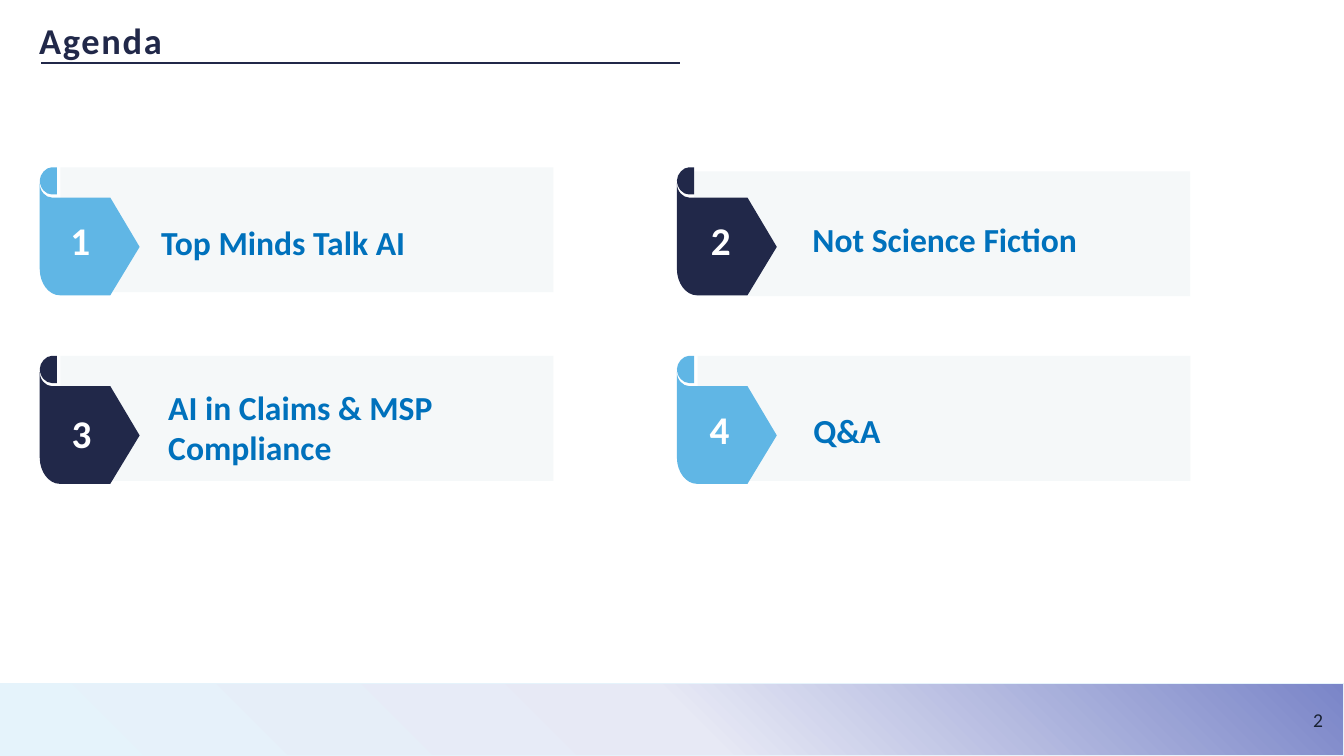
from dataclasses import dataclass

from lxml import etree
from pptx import Presentation
from pptx import util as u
from pptx.dml.color import RGBColor
from pptx.enum import shapes, text
from pptx.oxml import ns

NAVY = RGBColor(0x21, 0x28, 0x49)
SKY = RGBColor(0x60, 0xB6, 0xE5)
BLUE = RGBColor(0x00, 0x71, 0xBC)
MIST = RGBColor(0xF5, 0xF8, 0xF9)
WHITE = RGBColor(0xFF, 0xFF, 0xFF)
INK = RGBColor(0x19, 0x22, 0x33)
ICE = RGBColor(0xE5, 0xF3, 0xFB)
HAZE = RGBColor(0xE7, 0xE9, 0xF5)
IRIS = RGBColor(0x7A, 0x85, 0xC8)

FONT = "Calibri"
WIDE, HIGH = u.Inches(13.33), u.Inches(7.5)

Point = tuple[float, float]
Box = tuple[float, float, float, float]


@dataclass(frozen=True)
class Card:
    """Agenda item; the boxes and offsets are relative to its grid cell."""
    num: str
    label: str
    col: int
    row: int
    color: RGBColor
    num_at: Point
    text_box: Box
    panel: Box = (1.53, 0, 36.68, 16.53)


# All lengths are percentages of the slide's width and height.
COLS, ROWS = (2.96, 50.37), (22.13, 47.07)
NUM_SIZE = (4.88, 7.6)
CARDS = (
    Card("1", "Top Minds Talk AI", 0, 0, SKY, (0.57, 5.8), (8.29, 6.53, 29.5, 6.67)),
    Card("2", "Not Science Fiction", 1, 0, NAVY, (0.83, 5.8), (9.34, 6.13, 28.8, 6.67),
         (1.28, 0.53, 36.9, 16.53)),
    Card("3", "AI in Claims & MSP Compliance", 0, 1, NAVY, (0.67, 6.45),
         (8.82, 3.47, 29, 12.13)),
    Card("4", "Q&A", 1, 1, SKY, (0.73, 5.87), (9.41, 6.53, 28.7, 6.67)),
)

# One point is a straight step, three points are a Bézier step.
ARROW = (
    ((0, 13.47),),
    ((0, 15.33), (0.67, 16.93), (1.5, 16.93)),
    ((5.25, 16.93),), ((7.43, 10.53),), ((5.25, 4),), ((0.9, 4),),
    ((0.45, 4), (0, 3.2), (0, 2.13)),
)
CURL = (
    ((0, 1.73),),
    ((0, 2.8), (0.45, 3.6), (0.9, 3.6)),
    ((1.28, 3.6),), ((1.28, 0),), ((0.9, 0),),
    ((0.45, 0), (0, 0.93), (0, 1.73)),
)


def across(share: float) -> int:
    return round(WIDE * share / 100)


def down(share: float) -> int:
    return round(HIGH * share / 100)


def place(box: Box) -> tuple[int, int, int, int]:
    left, top, width, height = box
    return across(left), down(top), across(width), down(height)


def shift(box: Box, left: float, top: float) -> Box:
    return box[0] + left, box[1] + top, box[2], box[3]


def curve(shape, steps: tuple) -> None:
    """Join the three line segments of each Bézier step into one curve."""
    trail = shape._element.spPr.find(".//" + ns.qn("a:path"))
    nodes = iter(list(trail))
    for step in steps:
        parts = [next(nodes) for _ in step]
        if len(parts) == 3:
            bend = etree.Element(ns.qn("a:cubicBezTo"))
            parts[0].addprevious(bend)
            for part in parts:
                bend.append(part[0])
                trail.remove(part)


def add_form(slide, steps: tuple, left: float, top: float, color: RGBColor) -> None:
    spots = [(across(left + x), down(top + y)) for step in steps for x, y in step]
    pen = slide.shapes.build_freeform(*spots[0], scale=1.0)
    pen.add_line_segments(spots[1:], close=True)
    form = pen.convert_to_shape()
    curve(form, steps)
    paint(form, color)


def paint(shape, color: RGBColor) -> None:
    shape.shadow.inherit = False
    shape.fill.solid()
    shape.fill.fore_color.rgb = color
    shape.line.fill.background()


def add_rect(slide, box: Box):
    return slide.shapes.add_shape(shapes.MSO_SHAPE.RECTANGLE, *place(box))


def add_text(slide, words: str, box: Box, size: float, color: RGBColor,
             bold: bool = True, align=text.PP_ALIGN.LEFT, grow: bool = True):
    frame = slide.shapes.add_textbox(*place(box)).text_frame
    frame.text = words
    frame.word_wrap = True
    if grow:
        frame.auto_size = text.MSO_AUTO_SIZE.SHAPE_TO_FIT_TEXT
    para = frame.paragraphs[0]
    para.alignment = align
    font = para.runs[0].font
    font.name, font.size, font.bold = FONT, u.Pt(size), bold
    font.color.rgb = color
    return frame


def add_band(slide) -> None:
    """Gradient strip along the foot of the slide."""
    band = add_rect(slide, (0, 90.4, 100, 9.6))
    band.shadow.inherit = False
    band.line.color.rgb = ICE
    band.line.width = u.Pt(1)
    band.fill.gradient()
    band.fill.gradient_angle = 45
    stops = band._element.spPr.find(".//" + ns.qn("a:gsLst"))
    for stop in list(stops):
        stops.remove(stop)
    for share, color in ((0, ICE), (51, HAZE), (100, IRIS)):
        stop = etree.SubElement(stops, ns.qn("a:gs"), pos=str(share * 1000))
        etree.SubElement(stop, ns.qn("a:srgbClr"), val=str(color))


def add_title(slide) -> None:
    frame = add_text(slide, "Agenda", (2.18, 2.4, 40, 7.47), 26, NAVY, grow=False)
    para = frame.paragraphs[0]
    para.line_spacing = 0.9
    para.runs[0]._r.get_or_add_rPr().set("spc", "120")
    rule = slide.shapes.add_connector(
        shapes.MSO_CONNECTOR.STRAIGHT,
        across(3.08), down(8.35), across(50.6), down(8.35))
    rule.line.color.rgb = NAVY
    rule.line.width = u.Pt(1.75)
    etree.SubElement(rule._element.spPr, ns.qn("a:effectLst"))


def add_card(slide, card: Card) -> None:
    left, top = COLS[card.col], ROWS[card.row]
    paint(add_rect(slide, shift(card.panel, left, top)), MIST)
    for steps in (ARROW, CURL):
        add_form(slide, steps, left, top, card.color)
    add_text(slide, card.num, shift((*card.num_at, *NUM_SIZE), left, top), 28, WHITE,
             align=text.PP_ALIGN.CENTER)
    add_text(slide, card.label, shift(card.text_box, left, top), 24, BLUE)


def main() -> None:
    deck = Presentation()
    deck.slide_width, deck.slide_height = WIDE, HIGH
    slide = deck.slides.add_slide(deck.slide_layouts[6])
    add_band(slide)
    page = add_text(slide, "2", (95.05, 92.93, 4.13, 4.53), 14, INK,
                    bold=False, align=text.PP_ALIGN.RIGHT)
    page.vertical_anchor = text.MSO_ANCHOR.MIDDLE
    add_title(slide)
    for card in CARDS:
        add_card(slide, card)
    deck.save("out.pptx")


if __name__ == "__main__":
    main()
